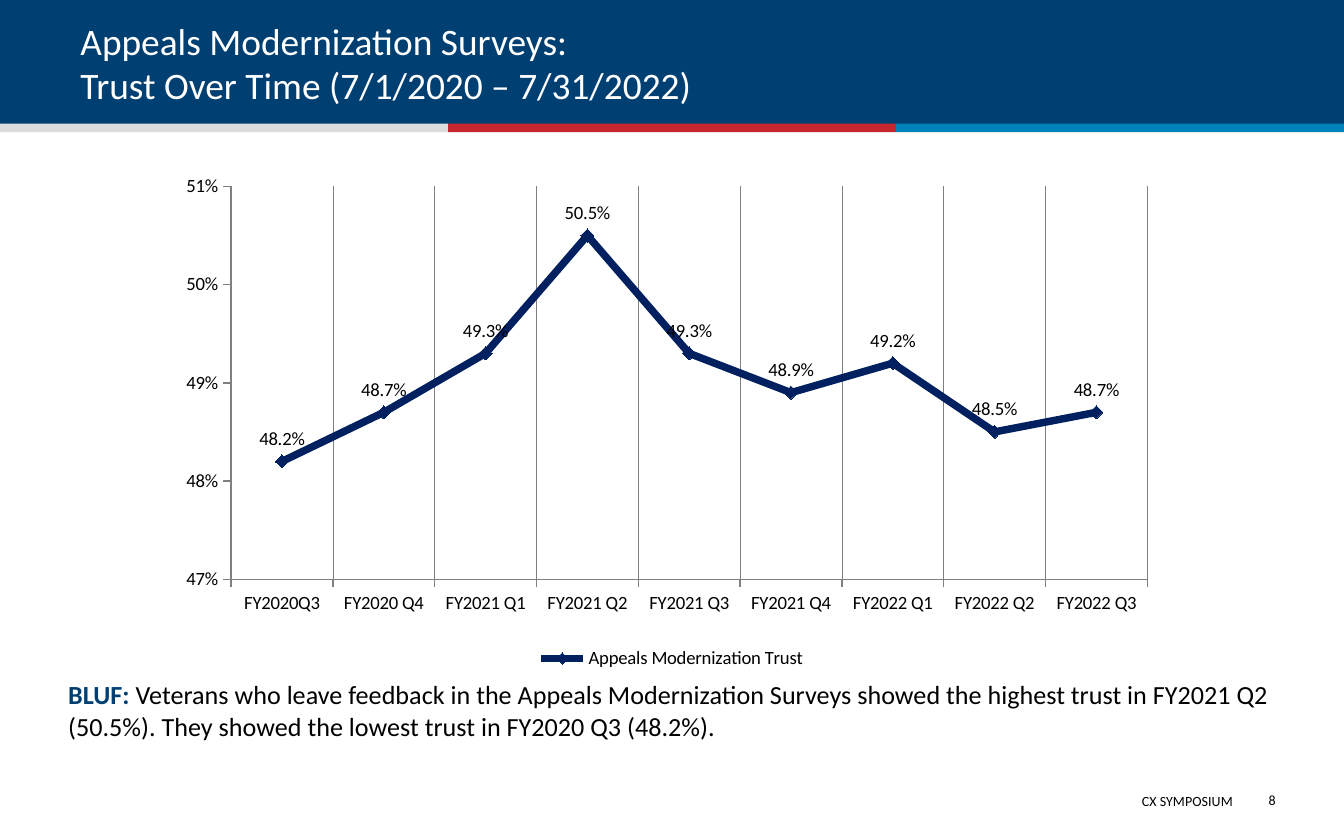
import pptx
import pptx.chart.data
import pptx.dml.color
import pptx.enum.chart
import pptx.enum.shapes
import pptx.enum.text
import pptx.oxml
import pptx.oxml.ns
import pptx.util

Cm = pptx.util.Cm
Pt = pptx.util.Pt
RGB = pptx.dml.color.RGBColor
ALIGN = pptx.enum.text.PP_ALIGN
ANCHOR = pptx.enum.text.MSO_ANCHOR

NAVY = RGB(0x00, 0x3F, 0x72)
SILVER = RGB(0xDB, 0xDC, 0xDE)
RED = RGB(0xC6, 0x26, 0x2D)
BLUE = RGB(0x00, 0x82, 0xBD)
INK = RGB(0x00, 0x20, 0x60)
GRAY = RGB(0x80, 0x80, 0x80)
BLACK = RGB(0, 0, 0)
WHITE = RGB(0xFF, 0xFF, 0xFF)
FONT = "Calibri"
WIDTH, HEIGHT = 25.4, 15.88

TREND = {
    "FY2020Q3": 0.482, "FY2020 Q4": 0.487, "FY2021 Q1": 0.493,
    "FY2021 Q2": 0.505, "FY2021 Q3": 0.493, "FY2021 Q4": 0.489,
    "FY2022 Q1": 0.492, "FY2022 Q2": 0.485, "FY2022 Q3": 0.487,
}


def set_font(font, size, color=BLACK, bold=False):
    """Give a font the deck's typeface with a size, colour and weight."""
    font.name, font.size, font.bold = FONT, Pt(size), bold
    font.color.rgb = color


def add_bar(slide, box, color):
    """Draw a plain filled rectangle."""
    kind = pptx.enum.shapes.MSO_SHAPE.RECTANGLE
    bar = slide.shapes.add_shape(kind, *map(Cm, box))
    bar.shadow.inherit = False
    bar.fill.solid()
    bar.fill.fore_color.rgb = color
    bar.line.fill.background()


def add_text(slide, box, parts, size, align=ALIGN.LEFT, anchor=ANCHOR.TOP,
             inset=(0, 0)):
    """Write one paragraph from (text, colour, bold) parts."""
    frame = slide.shapes.add_textbox(*map(Cm, box)).text_frame
    frame.word_wrap = True
    frame.vertical_anchor = anchor
    frame.margin_left = frame.margin_right = Cm(inset[0])
    frame.margin_top = frame.margin_bottom = Cm(inset[1])
    para = frame.paragraphs[0]
    para.alignment = align
    para.text = parts[0][0]
    for text, _, _ in parts[1:]:
        para.add_run().text = text
    if len(parts) == 1:
        parts = parts * len(para.runs)
    for run, (_, color, bold) in zip(para.runs, parts):
        set_font(run.font, size, color, bold)


def add_header(slide, box):
    """Place the title band with its three-colour stripe."""
    left, top, width, height = box
    add_bar(slide, box, NAVY)
    third = width / 3
    for i, color in enumerate((SILVER, RED, BLUE)):
        spot = (left + i * third, top + height - 0.07, third, 0.16)
        add_bar(slide, spot, color)
    title = ("Appeals Modernization Surveys:\v"
             "Trust Over Time (7/1/2020 – 7/31/2022)")
    spot = (left + 1.27, top + 0.28, width - 2.54, height - 0.53)
    add_text(slide, spot, [(title, WHITE, False)], 20,
             anchor=ANCHOR.BOTTOM, inset=(0.25, 0.13))


def style_axis(axis):
    """Give an axis gray lines, outward ticks and small labels."""
    axis.major_tick_mark = pptx.enum.chart.XL_TICK_MARK.OUTSIDE
    axis.format.line.color.rgb = GRAY
    axis.format.line.width = Pt(0.75)
    set_font(axis.tick_labels.font, 10)


def set_layout(chart, frame):
    """Fix the inner plot area as fractions of the chart."""
    plot = chart._chartSpace.chart.plotArea
    for old in plot.findall(pptx.oxml.ns.qn("c:layout")):
        plot.remove(old)
    edges = "".join(f'<c:{key}Mode val="edge"/>' for key in "xy")
    sizes = "".join(f'<c:{key} val="{val}"/>' for key, val in zip("xywh", frame))
    plot.insert(0, pptx.oxml.parse_xml(
        f'<c:layout {pptx.oxml.ns.nsdecls("c")}><c:manualLayout>'
        f'<c:layoutTarget val="inner"/>{edges}{sizes}'
        '</c:manualLayout></c:layout>'))


def add_trend(slide, box):
    """Place the line chart of trust by quarter."""
    data = pptx.chart.data.CategoryChartData(number_format="0.0%")
    data.categories = list(TREND)
    data.add_series("Appeals Modernization Trust", list(TREND.values()))
    kind = pptx.enum.chart.XL_CHART_TYPE.LINE_MARKERS
    chart = slide.shapes.add_chart(kind, *map(Cm, box), data).chart
    set_font(chart.font, 10)
    chart.has_title = False
    chart.has_legend = True
    chart.legend.position = pptx.enum.chart.XL_LEGEND_POSITION.BOTTOM
    chart.legend.include_in_layout = False
    set_font(chart.legend.font, 10)
    set_layout(chart, (0.053, 0.039, 0.929, 0.774))

    quarters, trust = chart.category_axis, chart.value_axis
    style_axis(quarters)
    style_axis(trust)
    quarters.has_major_gridlines = True
    grid = quarters.major_gridlines.format.line
    grid.color.rgb, grid.width = GRAY, Pt(0.25)
    trust.has_major_gridlines = False
    trust.minimum_scale, trust.maximum_scale = 0.47, 0.51
    trust.major_unit = 0.01
    trust.tick_labels.number_format = "0%"
    trust.tick_labels.number_format_is_linked = False

    plot = chart.plots[0]
    plot.vary_by_categories = False
    line = plot.series[0]
    line.smooth = False
    line.format.line.color.rgb = INK
    line.format.line.width = Pt(4)
    mark = line.marker
    mark.style = pptx.enum.chart.XL_MARKER_STYLE.DIAMOND
    mark.size = 7
    mark.format.fill.solid()
    mark.format.fill.fore_color.rgb = INK
    mark.format.line.color.rgb = INK
    labels = line.data_labels
    labels.show_value = True
    labels.position = pptx.enum.chart.XL_LABEL_POSITION.ABOVE
    labels.number_format = "0.0%"
    labels.number_format_is_linked = False
    set_font(labels.font, 10)


def add_bluf(slide, box):
    """Write the main finding below the chart."""
    note = ("Veterans who leave feedback in the Appeals Modernization Surveys "
            "showed the highest trust in FY2021 Q2 (50.5%). They showed the "
            "lowest trust in FY2020 Q3 (48.2%).")
    parts = [("BLUF", NAVY, True), (": ", NAVY, True), (note, BLACK, False)]
    add_text(slide, box, parts, 14, inset=(0.02, 0.03))


def add_footer(slide, box):
    """Place the event name and page number at the right of the box."""
    left, top, width, height = box
    add_text(slide, (left, top + 0.15, width - 0.56, 0.58),
             [("CX SYMPOSIUM", BLACK, False)], 7.5, ALIGN.RIGHT,
             inset=(0.25, 0.13))
    add_text(slide, (left + width - 0.69, top, 0.69, height),
             [("8", BLACK, False)], 7.5, ALIGN.RIGHT, ANCHOR.MIDDLE)


def main():
    """Build and save the slide."""
    deck = pptx.Presentation()
    deck.slide_width, deck.slide_height = Cm(WIDTH), Cm(HEIGHT)
    slide = deck.slides.add_slide(deck.slide_layouts[6])
    add_header(slide, (0, 0, WIDTH, 2.41))
    add_trend(slide, (3.38, 3.15, 18.64, 9.6))
    add_bluf(slide, (1.27, 12.8, 22.81, 1.22))
    add_footer(slide, (10.52, 14.71, 13.59, 0.84))
    deck.save("out.pptx")


if __name__ == "__main__":
    main()
